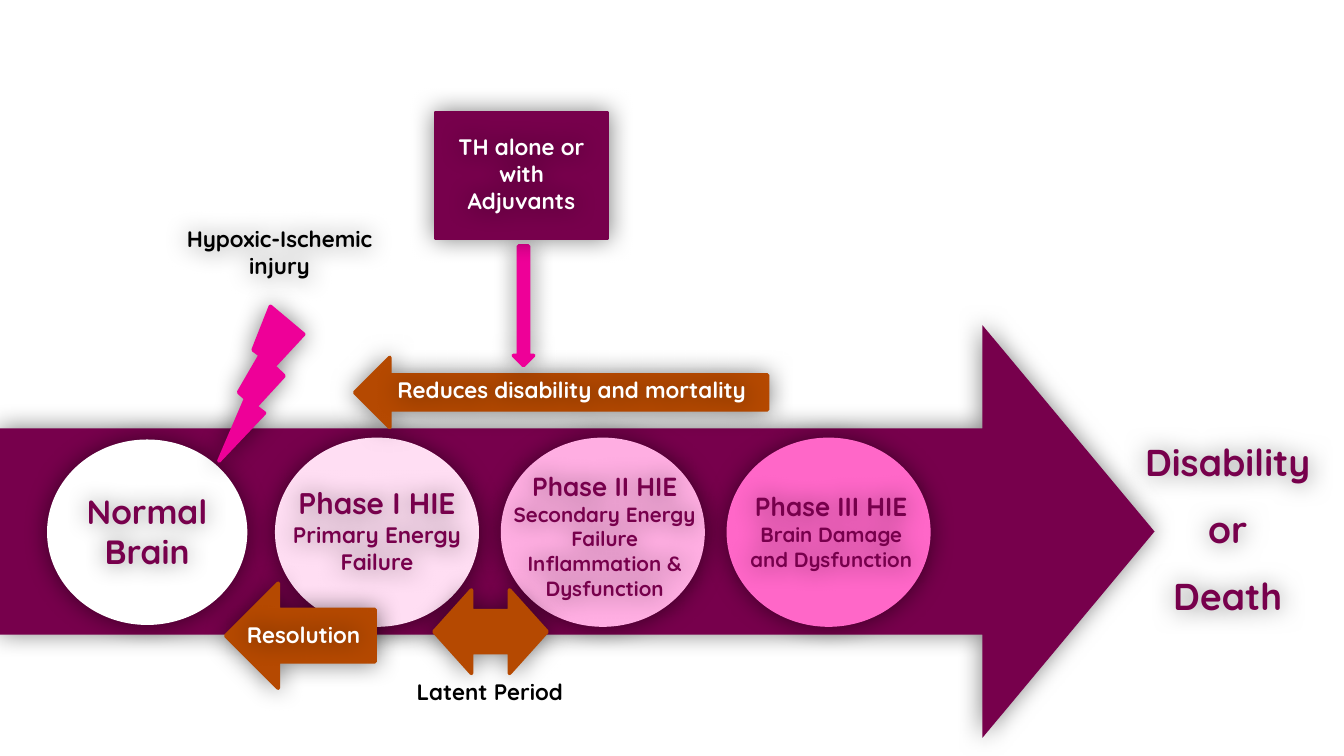
import lxml.etree
import pptx
import pptx.dml.color
import pptx.enum.shapes
import pptx.enum.text
import pptx.oxml.ns
import pptx.util

SHAPE = pptx.enum.shapes.MSO_SHAPE
PLUM, RUST, MAGENTA = "77004C", "B54901", "EE0098"
WHITE, BLACK = "FFFFFF", "000000"
COLUMNS, ROWS = 100, 56.25


def rgb(value):
    return pptx.dml.color.RGBColor.from_string(value)


class Diagram:
    """Draws on one slide; boxes are (column, row, columns, rows) of its grid."""

    font = "Quicksand"
    shadow_blur = 13
    shadow_opacity = 50

    def __init__(self, presentation):
        self.slide = presentation.slides.add_slide(presentation.slide_layouts[6])
        self.column = presentation.slide_width / COLUMNS
        self.row = presentation.slide_height / ROWS

    def place(self, box):
        units = (self.column, self.row) * 2
        return [round(length * unit) for length, unit in zip(box, units)]

    def add_glow_shadow(self, shape):
        """Give the shape a soft black shadow on all sides."""
        tag = pptx.oxml.ns.qn
        shape.shadow.inherit = False
        effects = shape._element.spPr.find(tag("a:effectLst"))
        shadow = lxml.etree.SubElement(
            effects, tag("a:outerShdw"), blurRad=str(pptx.util.Pt(self.shadow_blur)),
            dist="0", dir="0", algn="ctr", rotWithShape="0")
        color = lxml.etree.SubElement(shadow, tag("a:srgbClr"), val=BLACK)
        lxml.etree.SubElement(color, tag("a:alpha"), val=str(self.shadow_opacity * 1000))

    def add_shape(self, kind, box, fill, outlined=True, adjustments=()):
        shape = self.slide.shapes.add_shape(kind, *self.place(box))
        shape.fill.solid()
        shape.fill.fore_color.rgb = rgb(fill)
        if outlined:
            shape.line.color.rgb = rgb(fill)
            shape.line.width = pptx.util.Pt(2)
        else:
            shape.line.fill.background()
        for index, value in enumerate(adjustments):
            shape.adjustments[index] = value
        self.add_glow_shadow(shape)
        return shape

    def add_text(self, box, lines, color, spacing=None, shadow=True):
        """Write centred bold lines, each a pair of wording and point size."""
        shape = self.slide.shapes.add_textbox(*self.place(box))
        frame = shape.text_frame
        frame.word_wrap = True
        frame.auto_size = pptx.enum.text.MSO_AUTO_SIZE.SHAPE_TO_FIT_TEXT
        frame.text = "\n".join(wording for wording, size in lines)
        for paragraph, (wording, size) in zip(frame.paragraphs, lines):
            paragraph.alignment = pptx.enum.text.PP_ALIGN.CENTER
            paragraph.line_spacing = spacing
            for run in paragraph.runs:
                run.font.name = self.font
                run.font.size = pptx.util.Pt(size)
                run.font.bold = True
                run.font.color.rgb = rgb(color)
        if shadow:
            self.add_glow_shadow(shape)


def draw_timeline(diagram):
    diagram.add_shape(SHAPE.RIGHT_ARROW, (0, 24.2, 85.9, 30.7), PLUM,
                      outlined=False, adjustments=(0.5, 0.417))
    diagram.add_shape(SHAPE.OVAL, (3.5, 32.7, 14.9, 13.8), WHITE, outlined=False)
    for index, fill in enumerate(("FFDEF3", "FFAEE2", "FF67C8")):
        diagram.add_shape(SHAPE.OVAL, (20.6 + 16.8 * index, 32.7, 14.9, 13.8), fill)

    stages = [
        ((5.1, 36, 11.7, 7.1), [("Normal Brain", 18)]),
        ((20.8, 35.6, 14.5, 7.7), [("Phase I HIE", 16), ("Primary Energy Failure", 12)]),
        ((37.2, 34.5, 15.6, 10.8), [("Phase II HIE", 14), ("Secondary Energy Failure", 11),
                                    ("Inflammation & Dysfunction", 11)]),
        ((54.4, 36, 14.9, 7.1), [("Phase III HIE", 14), ("Brain Damage and Dysfunction", 11)]),
    ]
    for box, lines in stages:
        diagram.add_text(box, lines, PLUM)
    diagram.add_text((83.9, 30.5, 14.9, 15.5), [("Disability or", 20), ("Death", 20)],
                     PLUM, spacing=1.5)


def draw_recovery(diagram):
    diagram.add_shape(SHAPE.LEFT_ARROW, (16.8, 43.4, 11.1, 7.8), RUST)
    diagram.add_text((17.3, 45.7, 10.6, 3), [("Resolution", 12)], WHITE)
    diagram.add_shape(SHAPE.LEFT_RIGHT_ARROW, (32.3, 43.9, 8.4, 6.2), RUST,
                      adjustments=(0.5, 0.449))
    diagram.add_text((28.3, 50, 16.3, 3), [("Latent Period", 12)], BLACK, shadow=False)
    diagram.add_shape(SHAPE.LEFT_ARROW, (26.4, 26.6, 30.7, 5.2), RUST)
    diagram.add_text((28, 27.5, 29.1, 3), [("Reduces disability and mortality", 12)], WHITE)


def draw_causes(diagram):
    bolt = diagram.add_shape(SHAPE.LIGHTNING_BOLT, (16.3, 22.8, 6.3, 11.5), MAGENTA)
    bolt._element.spPr.xfrm.set("flipH", "1")
    diagram.add_text((11.9, 16.3, 17.8, 5), [("Hypoxic-Ischemic injury", 12)], BLACK)
    diagram.add_shape(SHAPE.DOWN_ARROW, (38.2, 18.3, 1.5, 8.9), MAGENTA)
    diagram.add_shape(SHAPE.RECTANGLE, (32.4, 8.4, 12.8, 9.3), PLUM)
    diagram.add_text((32.4, 9.4, 12.8, 7.1), [("TH alone or with Adjuvants", 12)], WHITE)


def main():
    presentation = pptx.Presentation()
    presentation.slide_width = pptx.util.Inches(10)
    presentation.slide_height = pptx.util.Inches(5.625)
    diagram = Diagram(presentation)
    draw_timeline(diagram)
    draw_recovery(diagram)
    draw_causes(diagram)
    presentation.save("out.pptx")


if __name__ == "__main__":
    main()
